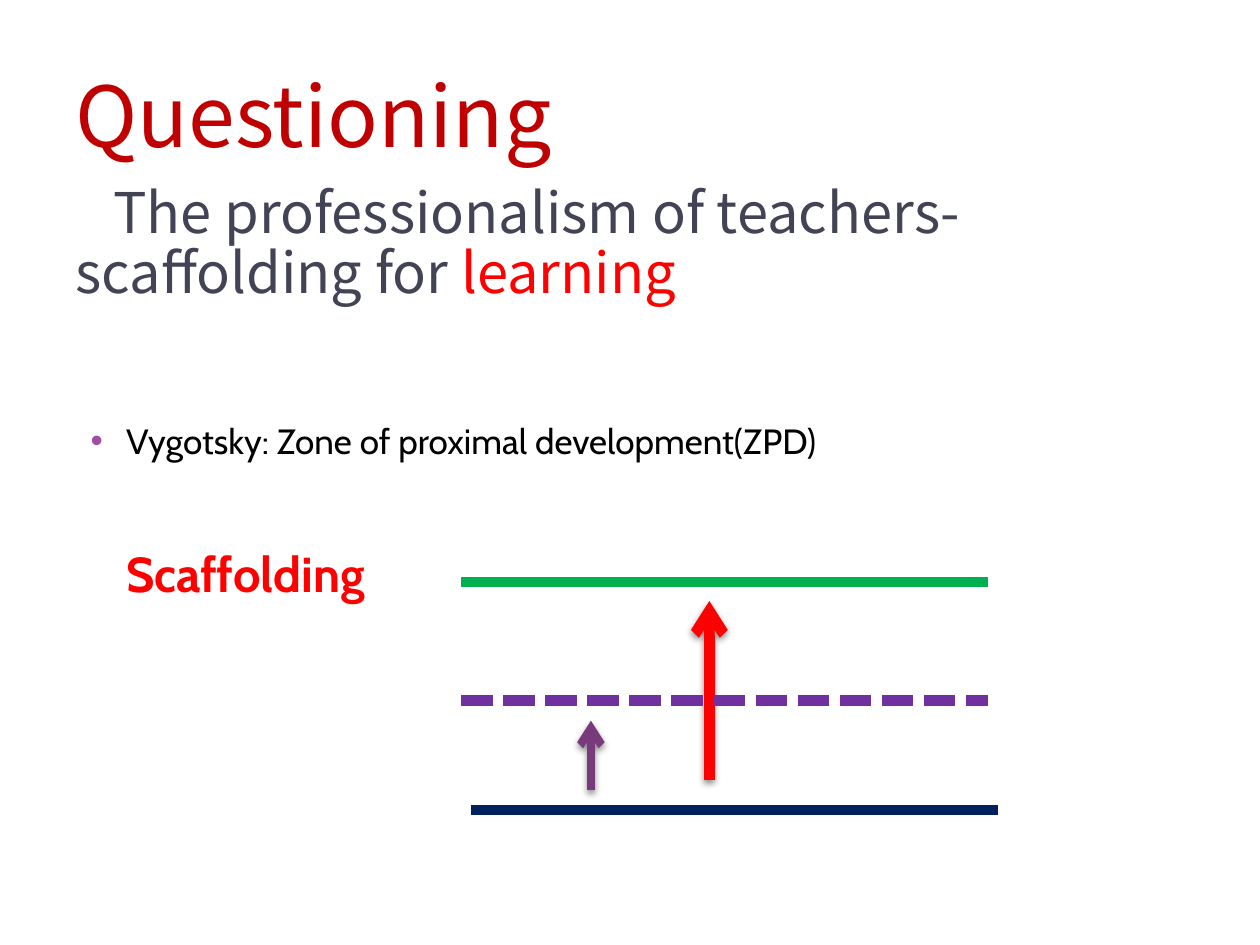
from dataclasses import dataclass

import pptx
import pptx.util
import pptx.dml.color
import pptx.enum.dml
import pptx.enum.shapes
import pptx.enum.text
import pptx.oxml
import pptx.oxml.ns
from lxml import etree

Inches = pptx.util.Inches
Pt = pptx.util.Pt
qn = pptx.oxml.ns.qn


@dataclass(frozen=True)
class Theme:
    title_font: str = "Noto Sans CJK TC"
    body_font: str = "Cabin"
    title_size: int = 48
    subtitle_size: int = 32
    body_size: int = 20
    label_size: int = 28
    crimson: str = "C00000"
    slate: str = "424456"
    red: str = "FF0000"
    black: str = "000000"
    bullet: str = "A04DA3"
    navy: str = "002060"
    green: str = "00B050"
    violet: str = "7030A0"
    plum: str = "783A7A"


def rgb(color):
    return pptx.dml.color.RGBColor.from_string(color)


class PageBuilder:
    def __init__(self, deck, theme):
        self.theme = theme
        self.page = deck.slides.add_slide(deck.slide_layouts[1])

    def placeholder(self, index, left, top, width, height, anchor):
        box = self.page.placeholders[index]
        box.left, box.top = Inches(left), Inches(top)
        box.width, box.height = Inches(width), Inches(height)
        frame = box.text_frame
        frame.word_wrap = True
        frame.auto_size = pptx.enum.text.MSO_AUTO_SIZE.NONE
        frame.vertical_anchor = anchor
        return frame

    def paragraph(self, para, spans, font, size, before=0, spacing=1.0,
                  margin=0, indent=0, bullet=None, bold=False):
        para.alignment = pptx.enum.text.PP_ALIGN.LEFT
        para.space_before = Pt(before)
        para.line_spacing = spacing
        para.font.name = font
        para.font.size = Pt(size)
        para.font.bold = bold
        for text, color in spans:
            span = para.add_run()
            span.text = text
            span.font.color.rgb = rgb(color)
        properties = para._p.get_or_add_pPr()
        properties.set("marL", str(Inches(margin)))
        properties.set("indent", str(Inches(indent)))
        marks = []
        if bullet:
            bullet_color = etree.Element(qn("a:buClr"))
            etree.SubElement(bullet_color, qn("a:srgbClr"), val=bullet)
            marks = [bullet_color, etree.Element(qn("a:buChar"), char="•")]
        else:
            marks = [etree.Element(qn("a:buNone"))]
        position = list(properties).index(properties.find(qn("a:defRPr")))
        properties[position:position] = marks

    def line(self, start, end, color, width, dash=None, arrow=False):
        line = self.page.shapes.add_connector(
            pptx.enum.shapes.MSO_CONNECTOR.STRAIGHT,
            *(Inches(value) for value in start + end))
        line.line.color.rgb = rgb(color)
        line.line.width = Pt(width)
        if dash:
            line.line.dash_style = dash
        effects = etree.SubElement(line._element.spPr, qn("a:effectLst"))
        if arrow:
            etree.SubElement(line.line._get_or_add_ln(), qn("a:tailEnd"), type="arrow")
            shadow = etree.SubElement(
                effects, qn("a:outerShdw"), blurRad=str(Pt(4)),
                dist=str(Pt(2.1)), dir="5400000", rotWithShape="0")
            shade = etree.SubElement(shadow, qn("a:srgbClr"), val=self.theme.black)
            etree.SubElement(shade, qn("a:alpha"), val="45000")

    def level(self, left, height, color, dash=None):
        self.line((left, height), (left + 4.18, height), color, 6, dash)

    def arrow(self, center, bottom, top, color, width):
        self.line((center, bottom), (center, top), color, width, arrow=True)


def main():
    deck = pptx.Presentation()
    deck.slide_width, deck.slide_height = Inches(10), Inches(7.5)
    theme = Theme()
    builder = PageBuilder(deck, theme)
    anchors = pptx.enum.text.MSO_ANCHOR

    title = builder.placeholder(0, 0.5, 0.56, 9.41, 1.9, anchors.MIDDLE)
    builder.paragraph(title.paragraphs[0], [("Questioning", theme.crimson)],
                      theme.title_font, theme.title_size, spacing=0.9)
    builder.paragraph(
        title.add_paragraph(),
        [("The professionalism of teachers- scaffolding for ", theme.slate),
         ("learning", theme.red)],
        theme.title_font, theme.subtitle_size, before=11, spacing=0.9, indent=0.3)

    body = builder.placeholder(1, 0.5, 3.28, 8.91, 3.91, anchors.TOP)
    builder.paragraph(
        body.paragraphs[0],
        [("Vygotsky: Zone of proximal development(ZPD)", theme.black)],
        theme.body_font, theme.body_size, before=3, margin=0.4, indent=-0.28,
        bullet=theme.bullet)
    builder.paragraph(body.add_paragraph(), [("Scaffolding", theme.red)],
                      theme.body_font, theme.label_size, before=47, margin=0.4,
                      bold=True)

    builder.level(3.74, 6.43, theme.navy)
    builder.level(3.66, 4.62, theme.green)
    builder.arrow(5.63, 6.19, 4.77, theme.red, 6)
    builder.level(3.66, 5.56, theme.violet, pptx.enum.dml.MSO_LINE.SQUARE_DOT)
    builder.arrow(4.69, 6.27, 5.72, theme.plum, 4.5)

    deck.save("out.pptx")


if __name__ == "__main__":
    main()
